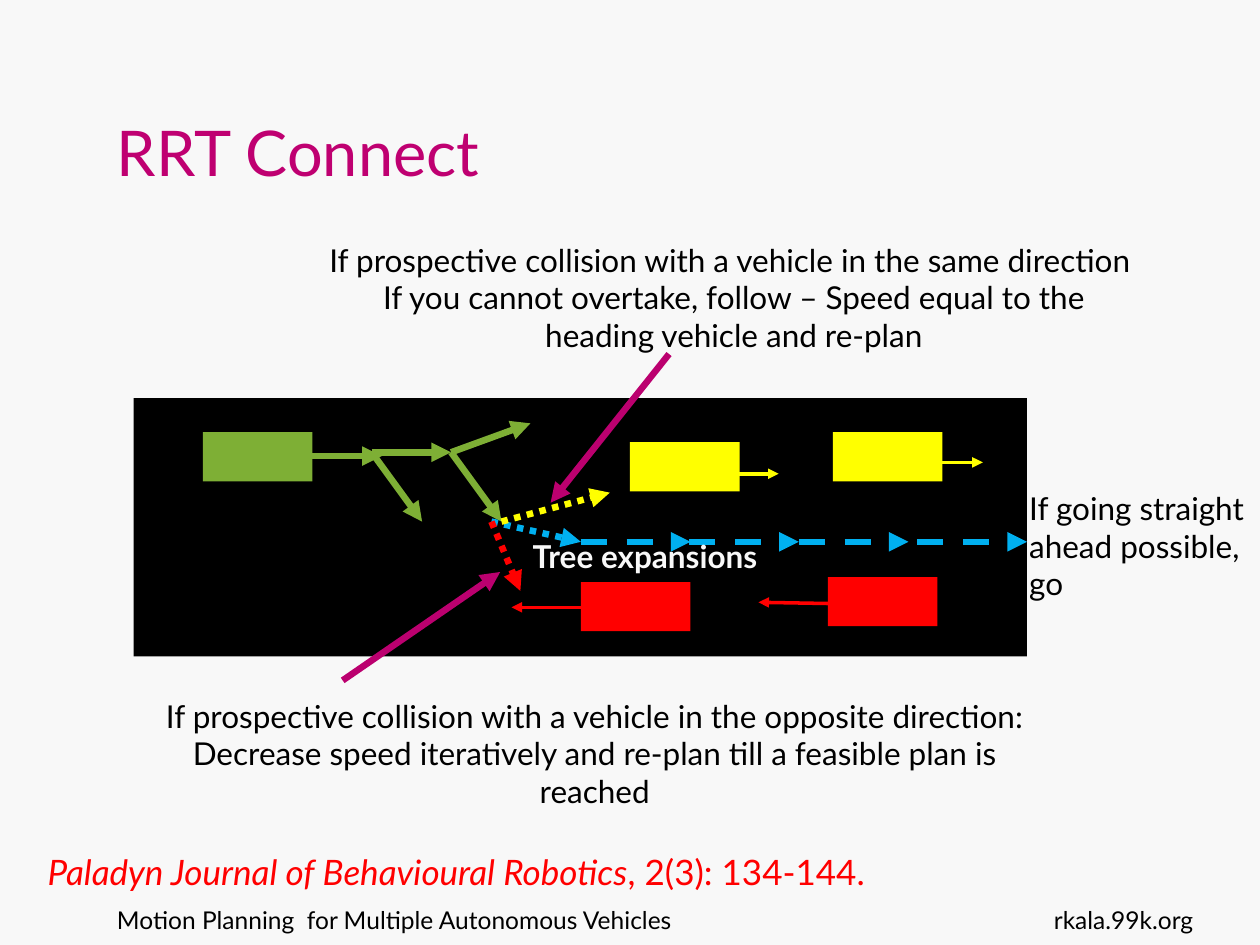
"""Build the RRT Connect slide: a road scene with planned branches and captions."""
import pptx
import pptx.dml.color
import pptx.enum.dml
import pptx.enum.shapes
import pptx.enum.text
import pptx.oxml
import pptx.util

Inches = pptx.util.Inches
ALIGN = pptx.enum.text.PP_ALIGN
ANCHOR = pptx.enum.text.MSO_ANCHOR
DASH = pptx.enum.dml.MSO_LINE

THEME = {
    "font": "Lato",
    "colours": {
        "background": "F8F8F8", "text": "000000", "title": "BF0071",
        "pointer": "BB006F", "road": "000000", "own": "7EAF35",
        "oncoming": "FF0000", "same_way": "FFFF00", "straight": "00B0F0",
    },
    "sizes": {"title": 36, "citation": 20, "caption": 18, "footer": 14},
    "thick": 3.75,
    "thin": 2,
}

ROAD = (1.06, 3.16, 7.09, 2.05)
VEHICLE_SIZE = (0.87, 0.39)
VEHICLES = [
    ("own", (1.61, 3.43)),
    ("oncoming", (6.57, 4.58)),
    ("same_way", (6.61, 3.43)),
    ("same_way", (5, 3.51)),
    ("oncoming", (4.61, 4.62)),
]

FIRST_NODE, SECOND_NODE, LOW_NODE = (2.95, 3.59), (3.58, 3.59), (3.98, 4.14)
EXPANSION_START, STRAIGHT_START = (3.9, 4.14), (4.61, 4.3)
STRAIGHT_STARTS = (4.61, 5.47, 6.34, 7.28)
STRAIGHT_STEP = 0.87

HEADINGS = [
    ("own", (2.17, 3.62), (3.03, 3.62), "thick"),
    ("oncoming", (6.57, 4.79), (6.02, 4.78), "thin"),
    ("same_way", (7.36, 3.67), (7.8, 3.67), "thin"),
    ("same_way", (5.75, 3.76), (6.18, 3.76), "thin"),
    ("oncoming", (4.61, 4.82), (4.06, 4.82), "thin"),
]
BRANCHES = [
    (FIRST_NODE, SECOND_NODE),
    (SECOND_NODE, LOW_NODE),
    (SECOND_NODE, (4.21, 3.36)),
    (FIRST_NODE, (3.35, 4.14)),
]
EXPANSIONS = [
    ("straight", EXPANSION_START, STRAIGHT_START),
    ("oncoming", EXPANSION_START, (4.13, 4.69)),
    ("same_way", LOW_NODE, (4.84, 3.91)),
]
POINTERS = [((2.72, 5.4), (3.97, 4.54)), ((5.31, 2.81), (4.37, 3.99))]

TITLE = ("RRT Connect", (0.83, 0.3, 6.77, 1.25))
CAPTIONS = [
    ("If prospective collision with a vehicle in the same direction  If you cannot "
     "overtake, follow – Speed equal to the heading vehicle and re-plan",
     (2.48, 1.86, 6.69, 1.01), ALIGN.CENTER),
    ("If prospective collision with a vehicle in the opposite direction: Decrease "
     "speed iteratively and re-plan till a feasible plan is reached",
     (1.06, 5.48, 7.32, 0.71), ALIGN.CENTER),
    ("If going straight ahead possible, go", (8.07, 3.83, 1.93, 1.01), ALIGN.LEFT),
]
TREE_LABEL = ("Tree expansions", (4.13, 4.21, 2.13, 0.4))
FOOTERS = [
    ("Motion Planning  for Multiple Autonomous Vehicles",
     (0.83, 7.13, 6.93, 0.52), ALIGN.LEFT),
    ("rkala.99k.org", (8.07, 7.13, 1.5, 0.52), ALIGN.RIGHT),
]
JOURNAL, ISSUE = "Paladyn Journal of Behavioural Robotics", ", 2(3): 134-144."
CITATION_PLACE = (0.28, 6.7, 8.19, 0.44)


def colour(role):
    return pptx.dml.color.RGBColor.from_string(THEME["colours"][role])


def add_block(slide, role, place):
    block = slide.shapes.add_shape(
        pptx.enum.shapes.MSO_SHAPE.RECTANGLE, *map(Inches, place))
    block.shadow.inherit = False
    block.fill.solid()
    block.fill.fore_color.rgb = colour(role)
    block.line.fill.background()


def add_arrow(slide, role, start, end, weight="thick", dash=None):
    arrow = slide.shapes.add_connector(
        pptx.enum.shapes.MSO_CONNECTOR.STRAIGHT, *map(Inches, start + end))
    arrow.line.color.rgb = colour(role)
    arrow.line.width = pptx.util.Pt(THEME[weight])
    if dash:
        arrow.line.dash_style = dash
    head = pptx.oxml.parse_xml(
        '<a:tailEnd xmlns:a="http://schemas.openxmlformats.org/drawingml/2006/main"'
        ' type="triangle"/>')
    arrow.line._get_or_add_ln().append(head)
    properties = arrow._element.spPr
    properties.append(properties.makeelement(
        head.tag.replace("tailEnd", "effectLst"), {}))


def write(box, runs, size, role="text", align=ALIGN.LEFT, bold=False):
    frame = box.text_frame
    frame.word_wrap = True
    paragraph = frame.paragraphs[0]
    for words in runs:
        paragraph.add_run().text = words
    paragraph.alignment = align
    font = paragraph.font
    font.name = THEME["font"]
    font.size = pptx.util.Pt(THEME["sizes"][size])
    font.bold = bold
    font.color.rgb = colour(role)
    return paragraph


def add_text(slide, place, runs, size, **style):
    return write(slide.shapes.add_textbox(*map(Inches, place)), runs, size, **style)


def add_title(slide):
    words, place = TITLE
    title = slide.shapes.add_textbox(*map(Inches, place))
    write(title, [words], "title", role="title")
    title.text_frame.vertical_anchor = ANCHOR.BOTTOM


def add_scene(slide):
    add_block(slide, "road", ROAD)
    for role, corner in VEHICLES:
        add_block(slide, role, corner + VEHICLE_SIZE)
    for heading in HEADINGS:
        add_arrow(slide, *heading)
    for start, end in BRANCHES:
        add_arrow(slide, "own", start, end)
    for role, start, end in EXPANSIONS:
        add_arrow(slide, role, start, end, dash=DASH.ROUND_DOT)
    level = STRAIGHT_START[1]
    for left in STRAIGHT_STARTS:
        add_arrow(slide, "straight", (left, level), (left + STRAIGHT_STEP, level),
                  dash=DASH.DASH)
    for start, end in POINTERS:
        add_arrow(slide, "pointer", start, end)


def add_words(slide):
    for words, place, align in CAPTIONS:
        add_text(slide, place, [words], "caption", align=align)
    words, place = TREE_LABEL
    add_text(slide, place, [words], "caption", role="background", bold=True)
    for words, place, align in FOOTERS:
        add_text(slide, place, [words], "footer", align=align)
    citation = add_text(slide, CITATION_PLACE, [JOURNAL, ISSUE], "citation",
                        role="oncoming")
    citation.runs[0].font.italic = True


def main():
    deck = pptx.Presentation()
    deck.slide_width, deck.slide_height = Inches(10), Inches(7.5)
    slide = deck.slides.add_slide(deck.slide_layouts[6])
    slide.background.fill.solid()
    slide.background.fill.fore_color.rgb = colour("background")
    add_title(slide)
    add_scene(slide)
    add_words(slide)
    deck.save("out.pptx")


if __name__ == "__main__":
    main()
